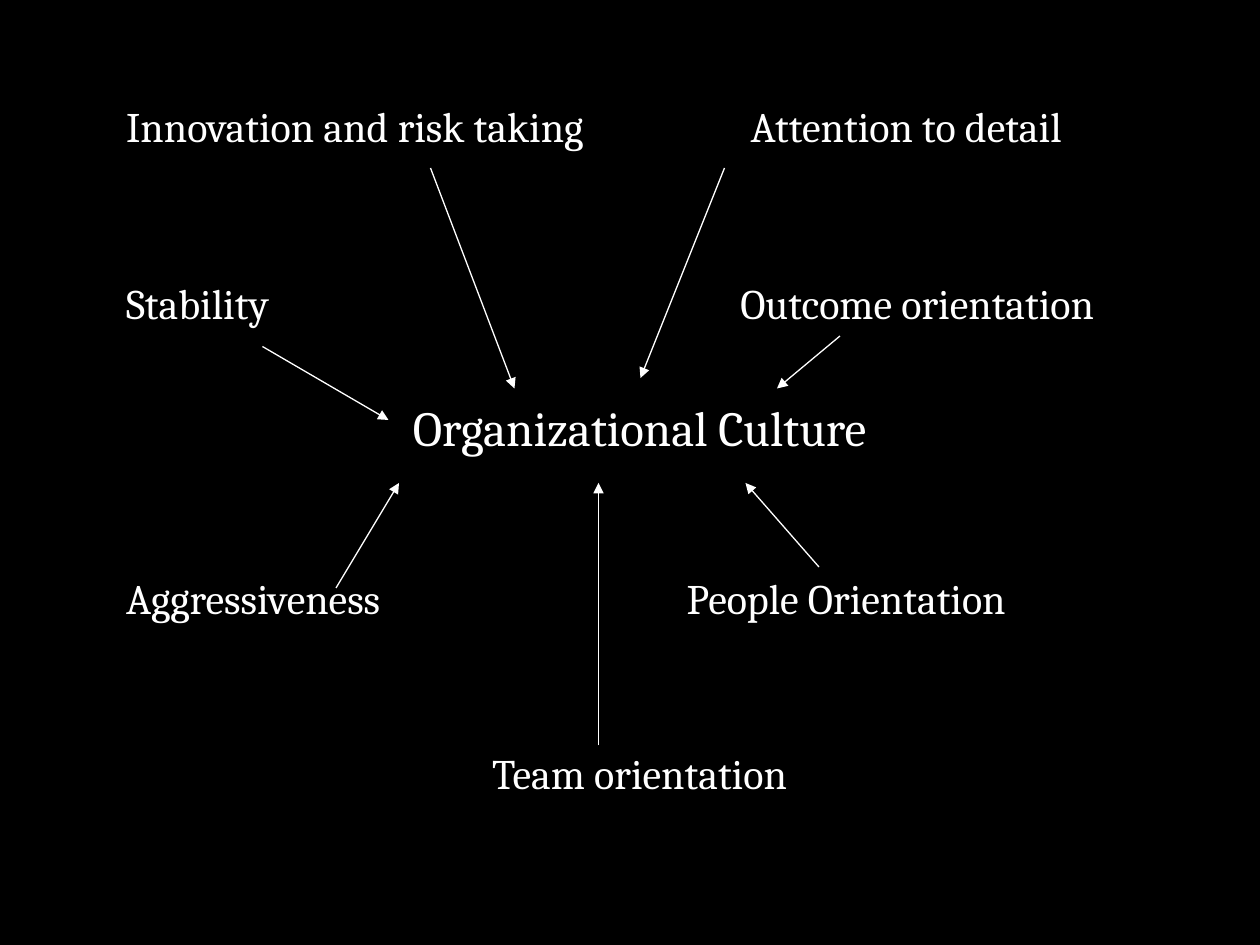
import pptx
import pptx.dml.color
import pptx.enum.shapes
import pptx.enum.text
import pptx.oxml
import pptx.util

UNIT = pptx.util.Inches(1) / 12
COLUMNS, ROWS = 120, 90
LABEL_WIDTH, LABEL_HEIGHT = 46, 6
CULTURE_COLUMN = 60.9
WHITE, BLACK = "FFFFFF", "000000"

CULTURE = ("Organizational Culture", 40.7)
TEAM = ("Team orientation", 73.6)
TRAITS = [
    ("Innovation and risk taking", 12, 12),
    ("Attention to detail", 71.5, 12),
    ("Stability", 12, 28.8),
    ("Outcome orientation", 70.5, 28.8),
    ("Aggressiveness", 12, 56.9),
    ("People Orientation", 65.4, 56.9),
]
ARROWS = [
    ((41, 16), (49, 37)),
    ((69, 16), (61, 36)),
    ((80, 32), (74, 37)),
    ((25, 33), (37, 40)),
    ((32, 56), (38, 46)),
    ((57, 71), (57, 46)),
    ((78, 54), (71, 46)),
]


def grid(*steps):
    return [round(step * UNIT) for step in steps]


def color(code):
    return pptx.dml.color.RGBColor.from_string(code)


def add_label(slide, text, left, middle, size=24, centered=False):
    label = slide.shapes.add_textbox(
        *grid(left, middle - LABEL_HEIGHT / 2, LABEL_WIDTH, LABEL_HEIGHT))
    frame = label.text_frame
    frame.word_wrap = True
    frame.vertical_anchor = pptx.enum.text.MSO_ANCHOR.MIDDLE
    frame.margin_left = frame.margin_right = 0
    frame.margin_top = frame.margin_bottom = 0
    line = frame.paragraphs[0]
    align = pptx.enum.text.PP_ALIGN
    line.alignment = align.CENTER if centered else align.LEFT
    run = line.add_run()
    run.text = text
    run.font.name = "Cambria"
    run.font.size = pptx.util.Pt(size)
    run.font.color.rgb = color(WHITE)


def add_arrow(slide, start, end):
    arrow = slide.shapes.add_connector(
        pptx.enum.shapes.MSO_CONNECTOR.STRAIGHT, *grid(*start, *end))
    arrow.line.color.rgb = color(WHITE)
    arrow.line.width = pptx.util.Pt(0.75)
    namespace = pptx.oxml.ns.nsdecls("a")
    arrow.line._get_or_add_ln().append(
        pptx.oxml.parse_xml(f'<a:tailEnd {namespace} type="triangle"/>'))
    arrow._element.spPr.append(
        pptx.oxml.parse_xml(f"<a:effectLst {namespace}/>"))


def main():
    """Build the slide of seven traits pointing to organizational culture."""
    deck = pptx.Presentation()
    deck.slide_width, deck.slide_height = grid(COLUMNS, ROWS)
    slide = deck.slides.add_slide(deck.slide_layouts[6])
    slide.background.fill.solid()
    slide.background.fill.fore_color.rgb = color(BLACK)

    for text, left, middle in TRAITS:
        add_label(slide, text, left, middle)
    for (text, middle), size in ((CULTURE, 28), (TEAM, 24)):
        add_label(slide, text, CULTURE_COLUMN - LABEL_WIDTH / 2, middle,
                  size=size, centered=True)
    for start, end in ARROWS:
        add_arrow(slide, start, end)
    deck.save("out.pptx")


if __name__ == "__main__":
    main()
